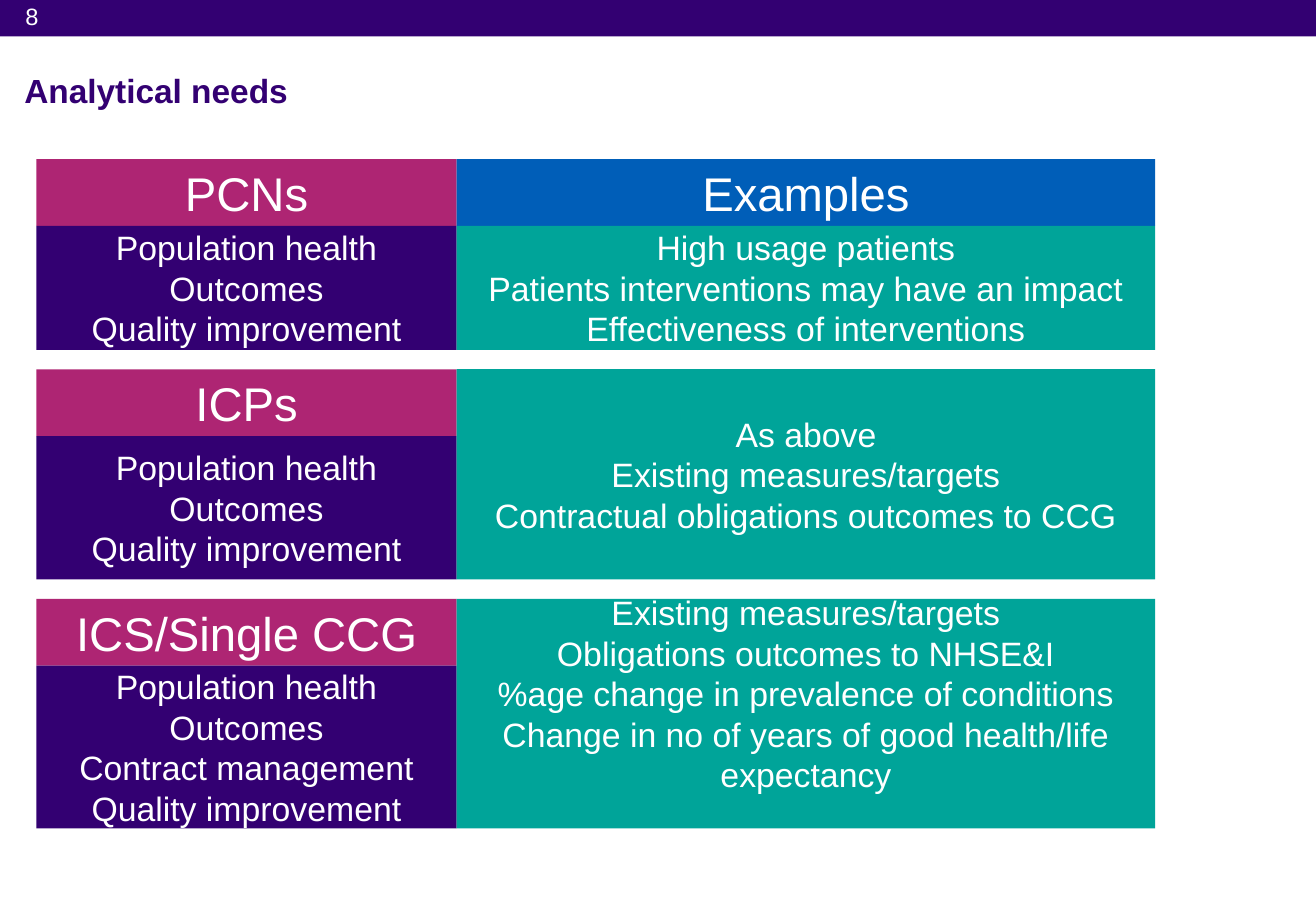
from pptx import Presentation
from pptx.dml.color import RGBColor
from pptx.enum import shapes, text
from pptx.util import Pt

PURPLE = RGBColor(0x33, 0x00, 0x72)
PINK = RGBColor(0xAE, 0x25, 0x73)
BLUE = RGBColor(0x00, 0x5E, 0xB8)
TEAL = RGBColor(0x00, 0xA4, 0x99)
WHITE = RGBColor(0xFF, 0xFF, 0xFF)

WIDTH, HEIGHT = 780, 540
LEFT, TOP = 21.6, 94.32
NEED_W, CASE_W = 249.12, 414
HEAD_H, GAP = 39.6, 11.52
LINE_H = 24

# Heading, height of the needs box, needs, examples, bottom inset of the examples
BANDS = [
    ("PCNs", 73.44,
     ["Population health", "Outcomes", "Quality improvement"],
     ["High usage patients", "Patients interventions may have an impact",
      "Effectiveness of interventions"], 3.6),
    ("ICPs", 84.96,
     ["Population health", "Outcomes", "Quality improvement"],
     ["As above", "Existing measures/targets",
      "Contractual obligations outcomes to CCG"], 3.6),
    ("ICS/Single CCG", 96.48,
     ["Population health", "Outcomes", "Contract management",
      "Quality improvement"],
     ["Existing measures/targets", "Obligations outcomes to NHSE&I",
      "%age change in prevalence of conditions",
      "Change in no of years of good health/life expectancy"], LINE_H),
]


class Deck:
    def __init__(self, font):
        self.font = font
        self.prs = Presentation()
        self.prs.slide_width, self.prs.slide_height = Pt(WIDTH), Pt(HEIGHT)
        self.slide = self.prs.slides.add_slide(self.prs.slide_layouts[6])

    def put(self, frame, lines, size, color, bold=False,
            align=text.PP_ALIGN.LEFT):
        """Fill a text frame with one paragraph per line."""
        frame.word_wrap = True
        for i, line in enumerate(lines):
            para = frame.add_paragraph() if i else frame.paragraphs[0]
            para.alignment = align
            run = para.add_run()
            run.text = line
            run.font.name, run.font.size = self.font, Pt(size)
            run.font.bold, run.font.color.rgb = bold, color

    def box(self, x, y, w, h, fill, lines=(), size=20, foot=3.6):
        """Draw a filled rectangle with centred lines; foot is its bottom inset."""
        shape = self.slide.shapes.add_shape(
            shapes.MSO_SHAPE.RECTANGLE, Pt(x), Pt(y), Pt(w), Pt(h))
        shape.shadow.inherit = False
        shape.fill.solid()
        shape.fill.fore_color.rgb = fill
        shape.line.fill.background()
        frame = shape.text_frame
        frame.vertical_anchor = text.MSO_ANCHOR.MIDDLE
        frame.margin_top, frame.margin_bottom = Pt(min(3.6, LINE_H - foot)), Pt(foot)
        self.put(frame, lines, size, WHITE, align=text.PP_ALIGN.CENTER)

    def label(self, x, y, w, h, line, size, color, bold=False, side=7.2,
              anchor=text.MSO_ANCHOR.TOP):
        frame = self.slide.shapes.add_textbox(
            Pt(x), Pt(y), Pt(w), Pt(h)).text_frame
        frame.margin_left = frame.margin_right = Pt(side)
        frame.vertical_anchor = anchor
        self.put(frame, [line], size, color, bold)


def main():
    deck = Deck("Arial")
    deck.box(0, 0, WIDTH, 21.6, PURPLE)
    deck.label(7.92, -2.16, 39.6, 24.48, "8", 14, WHITE)
    deck.label(14.4, 37.44, 732.96, 31.68, "Analytical needs", 19.8, PURPLE,
               bold=True, side=0, anchor=text.MSO_ANCHOR.MIDDLE)

    y, right = TOP, LEFT + NEED_W
    for i, (head, need_h, needs, cases, foot) in enumerate(BANDS):
        deck.box(LEFT, y, NEED_W, HEAD_H, PINK, [head], 28)
        deck.box(LEFT, y + HEAD_H, NEED_W, need_h, PURPLE, needs)
        # Only the first band carries a heading over its examples
        top = HEAD_H if i == 0 else 0
        if top:
            deck.box(right, y, CASE_W, top, BLUE, ["Examples"], 28)
        deck.box(right, y + top, CASE_W, HEAD_H + need_h - top, TEAL, cases,
                 foot=foot)
        y += HEAD_H + need_h + GAP

    deck.prs.save("out.pptx")


if __name__ == "__main__":
    main()
